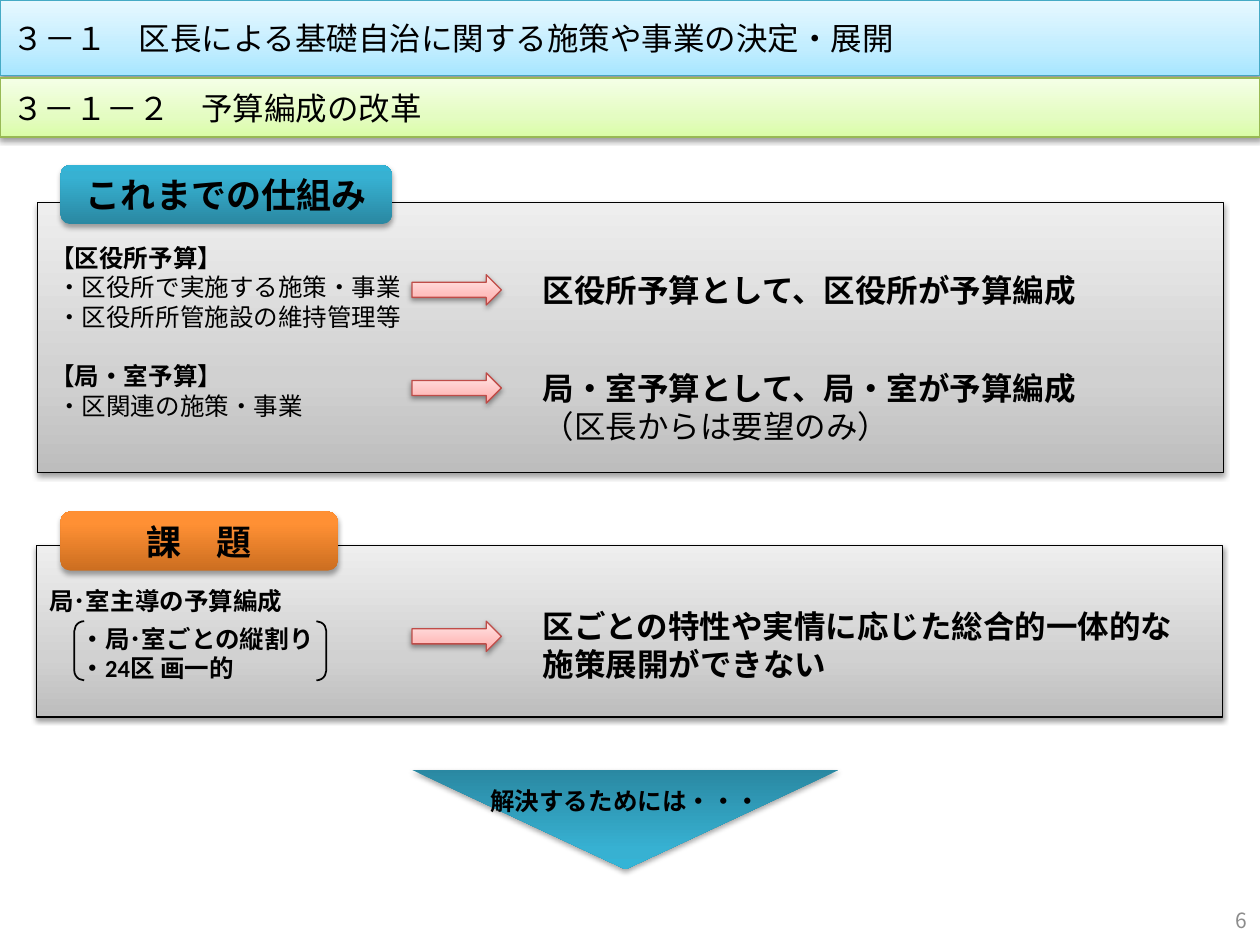
from dataclasses import dataclass
from typing import NamedTuple

from lxml import etree
from pptx import Presentation
from pptx import util as u
from pptx.dml.color import RGBColor
from pptx.enum import shapes, text
from pptx.oxml.ns import qn

Pt = u.Pt
SHAPE, ALIGN, ANCHOR = shapes.MSO_SHAPE, text.PP_ALIGN, text.MSO_ANCHOR
COLORS = {"ink": "000000", "number": "8C8C8C", "sky": "46AAC5", "lime": "98B955", "red": "BF4C48"}
GRADIENTS = {
    "sky": [(0, "A7E6FF"), (35, "C1EDFF"), (100, "E7F8FF")],
    "lime": [(0, "DAFDA7"), (35, "E4FCC2"), (100, "F5FFE7")],
    "gray": [(0, "BDBDBD"), (35, "D1D1D1"), (100, "EEEEEE")],
    "pink": [(0, "FFA6A5"), (35, "FFC0BF"), (100, "FFE7E7")],
    "teal": [(0, "2A88A2"), (80, "37B1D2"), (100, "34B4D6")],
    "orange": [(0, "CC6E20"), (80, "FF9034"), (100, "FF9136")],
}


class Box(NamedTuple):
    x: float
    y: float
    w: float
    h: float

    def lengths(self) -> list:
        return [Pt(v) for v in self]


@dataclass
class Line:
    words: str
    bold: bool = True
    indent: float = 0
    before: float = 0


@dataclass
class Panel:
    box: Box
    lines: list[Line]
    tab: str
    tab_width: float
    tab_fill: str


@dataclass
class Message:
    box: Box
    arrow_y: float
    lines: list[Line]


PANELS = [
    Panel(Box(21.6, 115.9, 677.5, 154.1), [
        Line("【区役所予算】"),
        Line("・区役所で実施する施策・事業", False, 4),
        Line("・区役所所管施設の維持管理等", False, 4),
        Line("【局・室予算】", before=17),
        Line("・区関連の施策・事業", False, 4),
    ], "これまでの仕組み", 189.4, "teal"),
    Panel(Box(20.9, 311.8, 677.5, 97.9), [
        Line("局･室主導の予算編成"),
        Line("・局･室ごとの縦割り", indent=18, before=5),
        Line("・24区 画一的", indent=18),
    ], "課　題", 158.4, "orange"),
]
TAB_TOPS = [94.3, 292.3]
MESSAGES = [
    Message(Box(303.1, 151.2, 362.9, 28.8), 157, [Line("区役所予算として、区役所が予算編成")]),
    Message(Box(303.1, 207.4, 402.5, 51.1), 213.1,
            [Line("局・室予算として、局・室が予算編成"), Line("（区長からは要望のみ）", False)]),
    Message(Box(303.1, 343.4, 380.2, 51.1), 355,
            [Line("区ごとの特性や実情に応じた総合的一体的な施策展開ができない")]),
]


def write(sp, lines: list[Line], *, size: float, color: str = "ink", font: str = "Calibri",
          align=ALIGN.LEFT, anchor=ANCHOR.TOP, top: float = 3.6) -> None:
    tf = sp.text_frame
    tf.word_wrap = True
    tf.auto_size = text.MSO_AUTO_SIZE.NONE
    tf.vertical_anchor = anchor
    tf.margin_top = Pt(top)
    for i, line in enumerate(lines):
        p = tf.add_paragraph() if i else tf.paragraphs[0]
        p.alignment = align
        p.space_before = Pt(line.before)
        p_pr = p._p.get_or_add_pPr()
        p_pr.set("marL", str(Pt(line.indent)))
        p_pr.set("indent", "0")
        etree.SubElement(p_pr, qn("a:buNone"))
        r = p.add_run()
        r.text = line.words
        r.font.name, r.font.size, r.font.bold = font, Pt(size), line.bold
        r.font.color.rgb = RGBColor.from_string(COLORS[color])


def outline(sp, color: str | None, width: float = 0.75) -> None:
    if color is None:
        sp.line.fill.background()
        return
    sp.line.color.rgb = RGBColor.from_string(COLORS[color])
    sp.line.width = Pt(width)


def decorate(sp, fill: str, line: str | None = None) -> None:
    sp.fill.gradient()
    sp.fill.gradient_angle = 90
    stops = sp._element.spPr.find(".//" + qn("a:gsLst"))
    for gs in list(stops):
        stops.remove(gs)
    for pos, color in GRADIENTS[fill]:
        gs = etree.SubElement(stops, qn("a:gs"), pos=str(pos * 1000))
        etree.SubElement(gs, qn("a:srgbClr"), val=color)
    outline(sp, line)
    sp.shadow.inherit = False
    distance, alpha = (1.6, 38) if line else (1.8, 35)
    shadow = etree.SubElement(sp._element.spPr.find(qn("a:effectLst")), qn("a:outerShdw"),
                              blurRad=str(Pt(3.1)), dist=str(Pt(distance)),
                              dir="5400000", rotWithShape="0")
    ink = etree.SubElement(shadow, qn("a:srgbClr"), val=COLORS["ink"])
    etree.SubElement(ink, qn("a:alpha"), val=str(alpha * 1000))


def place(sp, box: Box):
    sp.left, sp.top, sp.width, sp.height = box.lengths()
    return sp


def add_shape(s, kind, box: Box, fill: str, line: str | None = None):
    sp = s.shapes.add_shape(kind, *box.lengths())
    decorate(sp, fill, line)
    return sp


def add_text(s, box: Box, lines: list[Line], **fmt) -> None:
    write(s.shapes.add_textbox(*box.lengths()), lines, **fmt)


def main() -> None:
    prs = Presentation()
    prs.slide_width, prs.slide_height = Pt(720), Pt(540)
    s = prs.slides.add_slide(prs.slide_layouts[3])
    title, *bodies = s.placeholders

    place(title, Box(0, 0, 720, 43.2))
    decorate(title, "sky", "sky")
    write(title, [Line("３－１　区長による基礎自治に関する施策や事業の決定・展開", False)],
          size=18, anchor=ANCHOR.MIDDLE)
    subtitle = add_shape(s, SHAPE.RECTANGLE, Box(0, 44.6, 720, 33.8), "lime", "lime")
    write(subtitle, [Line("３－１－２　予算編成の改革", False)], size=18, anchor=ANCHOR.MIDDLE)

    for panel, body, tab_top in zip(PANELS, bodies, TAB_TOPS):
        place(body, panel.box)
        decorate(body, "gray", "ink")
        write(body, panel.lines, size=14, top=23)
        tab = add_shape(s, SHAPE.ROUNDED_RECTANGLE,
                        Box(34.6, tab_top, panel.tab_width, 33.8), panel.tab_fill)
        write(tab, [Line(panel.tab)], size=20, align=ALIGN.CENTER, anchor=ANCHOR.MIDDLE)

    for message in MESSAGES:
        add_shape(s, SHAPE.RIGHT_ARROW, Box(235.4, message.arrow_y, 51.1, 17.3), "pink", "red")
        add_text(s, message.box, message.lines, size=18)

    bracket = s.shapes.add_shape(SHAPE.DOUBLE_BRACKET, *Box(42.5, 355, 144, 33.8).lengths())
    bracket.fill.background()
    outline(bracket, "ink", 1)
    bracket.shadow.inherit = False

    triangle = add_shape(s, SHAPE.ISOSCELES_TRIANGLE, Box(235.4, 439.9, 244.1, 56.9), "teal")
    triangle._element.spPr.find(qn("a:xfrm")).set("flipV", "1")
    add_text(s, Box(235.4, 445.7, 244.1, 24.5), [Line("解決するためには・・・")],
             size=14, align=ALIGN.CENTER)
    add_text(s, Box(552.2, 511.2, 167.8, 28.8), [Line("6", False)], size=12, color="number",
             font="Noto Sans CJK JP", align=ALIGN.RIGHT, anchor=ANCHOR.MIDDLE)
    prs.save("out.pptx")


if __name__ == "__main__":
    main()
